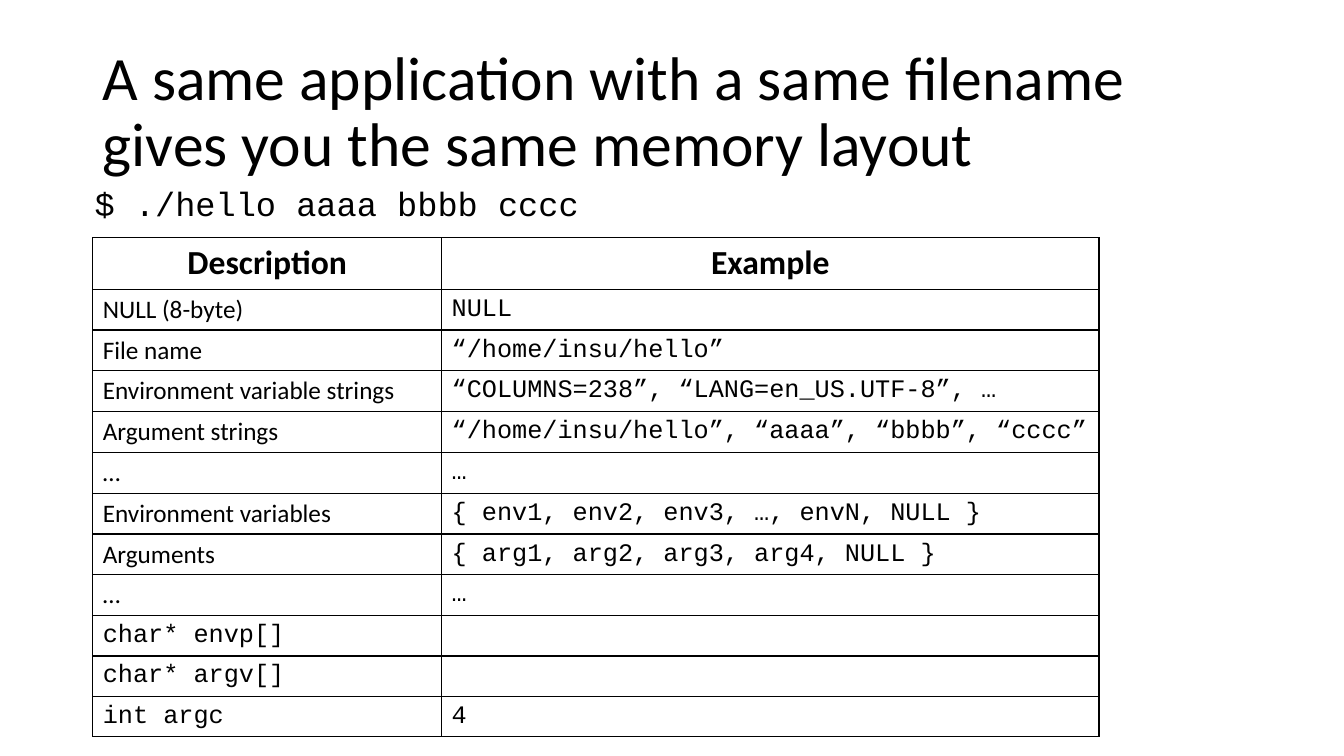
"""Build a slide on the memory layout of a program's arguments."""
import lxml.etree
import pptx
import pptx.dml.color
import pptx.enum.text
import pptx.oxml.ns
import pptx.util

WIDE, HIGH = 13.33, 7.5
HUES = {"ink": "000000", "page": "FFFFFF"}
SANS, MONO = "Calibri", "Courier New"
ALIGN = pptx.enum.text.PP_ALIGN
ANCHOR = pptx.enum.text.MSO_ANCHOR
COLS = (3.46, 6.52)
HEAD, BODY, TAIL = 0.51, 0.405, 0.385
ROWS = [
    ("NULL (8-byte)", "NULL"),
    ("File name", "“/home/insu/hello”"),
    ("Environment variable strings", "“COLUMNS=238”, “LANG=en_US.UTF-8”, …"),
    ("Argument strings", "“/home/insu/hello”, “aaaa”, “bbbb”, “cccc”"),
    ("…", "…"),
    ("Environment variables", "{ env1, env2, env3, …, envN, NULL }"),
    ("Arguments", "{ arg1, arg2, arg3, arg4, NULL }"),
    ("…", "…"),
]
CALLS = [("char* envp[]", ""), ("char* argv[]", ""), ("int argc", "4")]


def span(x, y, w, h):
    """Turn shares of the slide into lengths."""
    return [pptx.util.Inches(round(part * size, 2))
            for part, size in zip((x, y, w, h), (WIDE, HIGH, WIDE, HIGH))]


def add(node, tag, **attrs):
    """Append a drawing element."""
    return lxml.etree.SubElement(node, pptx.oxml.ns.qn(tag), **attrs)


def say(frame, text, font=SANS, size=18, bold=False, align=ALIGN.LEFT, line=None, gap=0):
    """Write one formatted paragraph, or a small end mark if it is empty."""
    para = frame.paragraphs[0]
    para.alignment = align
    para.space_before = pptx.util.Pt(gap)
    if line:
        para.line_spacing = line
    if not text:
        add(para._p, "a:endParaRPr", sz=str((size - 2) * 100))
        return
    run = para.add_run()
    run.text = text
    run.font.name = font
    run.font.size = pptx.util.Pt(size)
    run.font.bold = bold
    run.font.color.rgb = pptx.dml.color.RGBColor.from_string(HUES["ink"])


def box(slide, text, area, anchor=ANCHOR.TOP, **style):
    """Place a wrapped text box."""
    frame = slide.shapes.add_textbox(*span(*area)).text_frame
    frame.word_wrap = True
    frame.vertical_anchor = anchor
    say(frame, text, line=0.9, **style)


def edge(cell):
    """Draw a thin line on each side of a cell."""
    props = cell._tc.get_or_add_tcPr()
    for side in ("a:lnL", "a:lnR", "a:lnT", "a:lnB"):
        fill = add(add(props, side, w=str(pptx.util.Pt(1))), "a:solidFill")
        add(fill, "a:srgbClr", val=HUES["ink"])


def fill(cell, text, **style):
    """Set the lines, ground and text of a cell."""
    edge(cell)
    cell.fill.background()
    cell.vertical_anchor = ANCHOR.MIDDLE
    say(cell.text_frame, text, **style)


def grid(slide, x, y):
    """Build the table of the stack."""
    head = dict(size=24, bold=True, align=ALIGN.CENTER)
    plain, code = dict(font=SANS), dict(font=MONO)
    lines = [(HEAD, ("Description", "Example"), (head, head))]
    lines += [(BODY, pair, (plain, code)) for pair in ROWS]
    lines += [(TAIL, pair, (code, code)) for pair in CALLS]
    tall = sum(line[0] for line in lines)
    area = span(x, y, sum(COLS) / WIDE, tall / HIGH)
    table = slide.shapes.add_table(len(lines), len(COLS), *area).table
    table.first_row = table.horz_banding = False
    for col, width in zip(table.columns, COLS):
        col.width = pptx.util.Inches(width)
    for row, (height, texts, styles) in zip(table.rows, lines):
        row.height = pptx.util.Inches(height)
        for cell, text, style in zip(row.cells, texts, styles):
            fill(cell, text, **style)


def main():
    """Make the slide and save it."""
    deck = pptx.Presentation()
    deck.slide_width = pptx.util.Inches(WIDE)
    deck.slide_height = pptx.util.Inches(HIGH)
    slide = deck.slides.add_slide(deck.slide_layouts[6])
    ground = slide.background.fill
    ground.solid()
    ground.fore_color.rgb = pptx.dml.color.RGBColor.from_string(HUES["page"])
    left = 0.92 / WIDE
    wide = 11.5 / WIDE
    box(slide, "A same application with a same filename gives you the same memory layout",
        (left, 0.4 / HIGH, wide, 1.45 / HIGH), ANCHOR.MIDDLE, size=44)
    box(slide, "$ ./hello aaaa bbbb cccc",
        (0.84 / WIDE, 1.81 / HIGH, wide, 4.76 / HIGH), font=MONO, size=24, gap=10)
    grid(slide, left, 2.36 / HIGH)
    deck.save("out.pptx")


if __name__ == "__main__":
    main()
